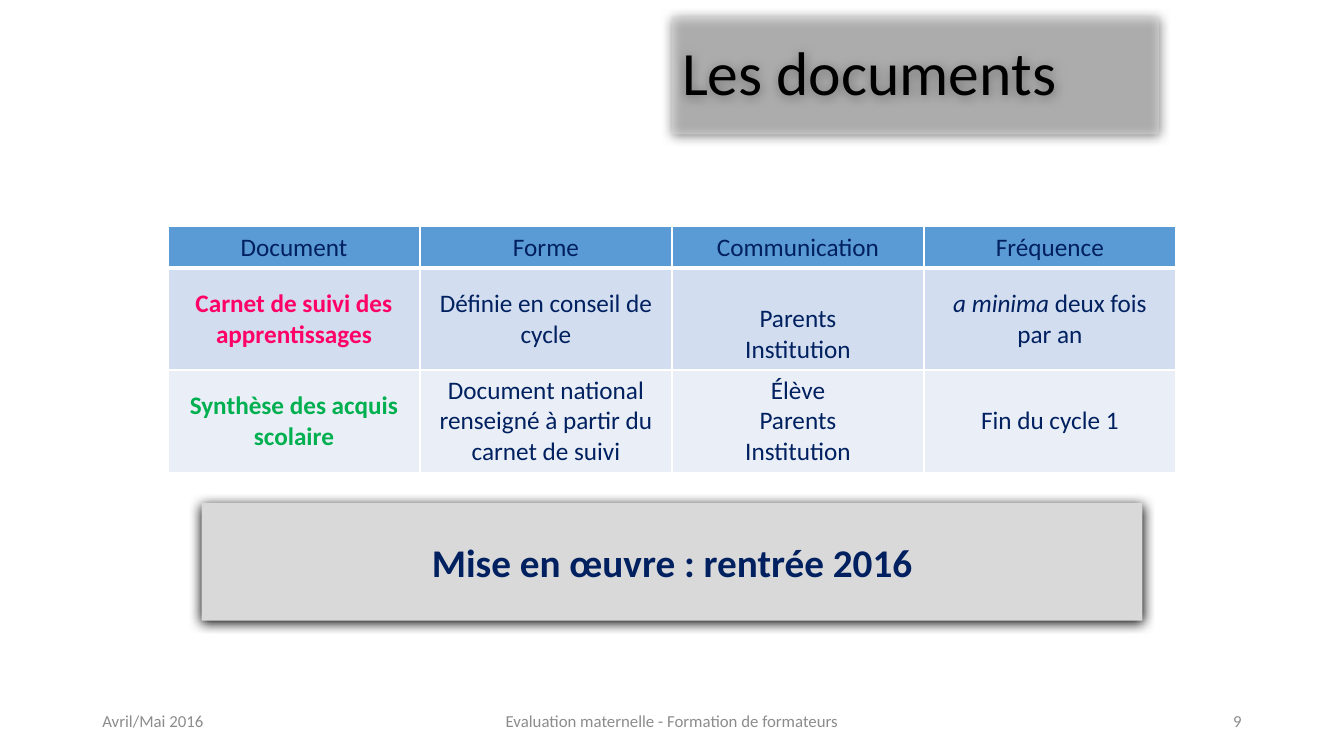
from lxml.etree import SubElement
from pptx import Presentation
from pptx.dml.color import RGBColor
from pptx.enum.shapes import MSO_SHAPE
from pptx.enum.text import MSO_ANCHOR, MSO_AUTO_SIZE, PP_ALIGN
from pptx.oxml.ns import qn
from pptx.util import Inches, Pt

WIDTH, HEIGHT = Inches(13.33), Inches(7.5)
COLUMN, ROW = WIDTH / 16, HEIGHT / 45
FONT = "Calibri"
COLORS = {
    "white": "FFFFFF", "black": "000000", "navy": "002060", "pink": "FF0066",
    "green": "00B050", "panel": "D9D9D9", "footer": "8C8C8C",
    "header": "5B9BD5", "band": "D2DEEF", "light band": "EAEFF7",
}
ROW_FILLS = ["header", "band", "light band"]
ROW_HEIGHTS = [0.41, 1, 1]
DOCUMENTS = [
    [["Document"], ["Forme"], ["Communication"], ["Fréquence"]],
    [["Carnet de suivi des apprentissages"], ["Définie en conseil de cycle"],
     ["Parents", "Institution"], [[("a minima ", True), ("deux fois par an", False)]]],
    [["Synthèse des acquis scolaire"],
     ["Document national", "renseigné à partir du carnet de suivi"],
     ["Élève", "Parents", "Institution"], ["Fin du cycle 1"]],
]
NAME_COLORS = {1: "pink", 2: "green"}
FOOTERS = [
    ("Avril/Mai 2016", 1.1, 3.6, PP_ALIGN.LEFT),
    ("Evaluation maternelle - Formation de formateurs", 5.3, 5.4, PP_ALIGN.CENTER),
    ("9", 11.3, 3.6, PP_ALIGN.RIGHT),
]


def grid(left, top, width, height):
    return [round(length) for length in
            (left * COLUMN, top * ROW, width * COLUMN, height * ROW)]


def color(name):
    return RGBColor.from_string(COLORS[name])


def add_run(paragraph, text, size, color_name, bold=False, italic=False):
    run = paragraph.add_run()
    run.text = text
    run.font.name, run.font.size = FONT, Pt(size)
    run.font.bold, run.font.italic = bold, italic
    run.font.color.rgb = color(color_name)


def write_line(shape, text, size, color_name, alignment, bold=False):
    frame = shape.text_frame
    frame.word_wrap = True
    frame.auto_size = MSO_AUTO_SIZE.NONE
    frame.vertical_anchor = MSO_ANCHOR.MIDDLE
    paragraph = frame.paragraphs[0]
    paragraph.alignment = alignment
    add_run(paragraph, text, size, color_name, bold)
    return paragraph


def style_panel(shape, opacity=100):
    shape.fill.solid()
    shape.fill.fore_color.rgb = color("panel")
    shape.line.fill.background()
    properties = shape.element.spPr
    if opacity < 100:
        fill_color = properties.find(qn("a:solidFill"))[0]
        SubElement(fill_color, qn("a:alpha"), val=str(opacity * 1000))
    shape.shadow.inherit = False
    effects = properties.find(qn("a:effectLst"))
    shadow = SubElement(effects, qn("a:outerShdw"), blurRad=str(Pt(8.5)),
                        dist=str(Pt(1)), dir=str(90 * 60000),
                        algn="t", rotWithShape="0")
    SubElement(shadow, qn("a:srgbClr"), val=COLORS["black"])


def add_title(slide):
    title = slide.shapes.title
    title.left, title.top, title.width, title.height = grid(8, 1, 5.8, 7)
    style_panel(title, 50)
    paragraph = write_line(title, "Les documents", 44, "black", PP_ALIGN.LEFT)
    paragraph.line_spacing = 0.9


def add_banner(slide):
    banner = slide.shapes.add_shape(MSO_SHAPE.RECTANGLE, *grid(2.4, 29.94, 11.2, 7))
    style_panel(banner)
    write_line(banner, "Mise en œuvre : rentrée 2016", 28, "navy", PP_ALIGN.CENTER, True)


def add_borders(cell, bottom_width):
    properties = cell._tc.get_or_add_tcPr()
    for position, side in enumerate("LRTB"):
        width = bottom_width if side == "B" else 1
        border = SubElement(properties, qn("a:ln" + side), w=str(Pt(width)))
        fill = SubElement(border, qn("a:solidFill"))
        SubElement(fill, qn("a:srgbClr"), val=COLORS["white"])
        properties.insert(position, border)


def fill_cell(cell, lines, fill_name, text_color, bold):
    cell.fill.solid()
    cell.fill.fore_color.rgb = color(fill_name)
    cell.vertical_anchor = MSO_ANCHOR.MIDDLE
    frame = cell.text_frame
    for index, line in enumerate(lines):
        paragraph = frame.add_paragraph() if index else frame.paragraphs[0]
        paragraph.alignment = PP_ALIGN.CENTER
        runs = [(line, False)] if isinstance(line, str) else line
        for text, italic in runs:
            add_run(paragraph, text, 18, text_color, bold, italic)


def add_documents_table(slide):
    frame = slide.shapes.add_table(3, 4, *grid(2, 13.5, 12, 14.46))
    table = frame.table
    table.first_row = table.horz_banding = False
    for row_index, row in enumerate(DOCUMENTS):
        table.rows[row_index].height = Inches(ROW_HEIGHTS[row_index])
        for column_index, lines in enumerate(row):
            cell = table.cell(row_index, column_index)
            named = row_index > 0 and column_index == 0
            text_color = NAME_COLORS[row_index] if named else "navy"
            fill_cell(cell, lines, ROW_FILLS[row_index], text_color, named)
            add_borders(cell, 1 if row_index else 3)
    table.cell(1, 2).margin_top = Inches(0.35)


def add_footer(slide, text, left, width, alignment):
    box = slide.shapes.add_textbox(*grid(left, 41.7, width, 2.4))
    write_line(box, text, 12, "footer", alignment)


def main():
    presentation = Presentation()
    presentation.slide_width, presentation.slide_height = WIDTH, HEIGHT
    slide = presentation.slides.add_slide(presentation.slide_layouts[5])
    slide.background.fill.solid()
    slide.background.fill.fore_color.rgb = color("white")
    add_documents_table(slide)
    for footer in FOOTERS:
        add_footer(slide, *footer)
    add_title(slide)
    add_banner(slide)
    presentation.save("out.pptx")


if __name__ == "__main__":
    main()
